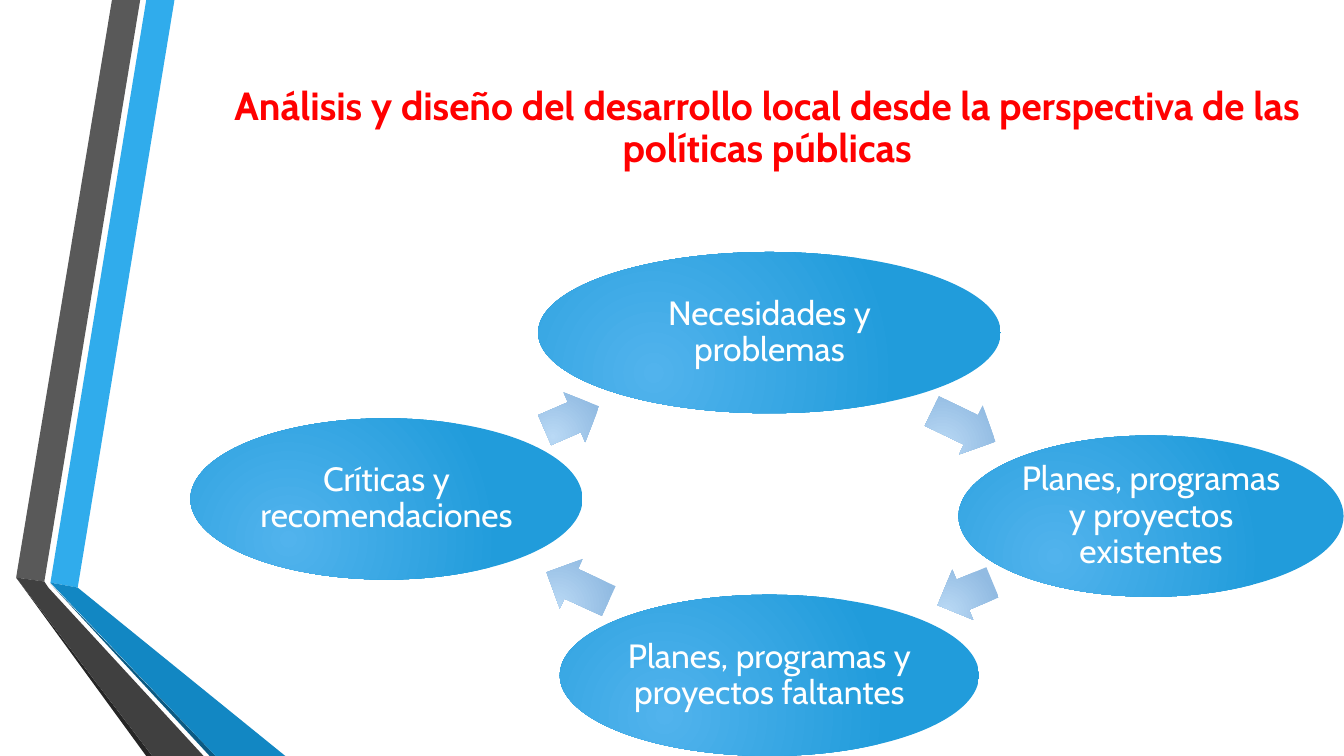
from dataclasses import dataclass

import pptx
import pptx.dml.color
import pptx.enum.shapes
import pptx.enum.text
import pptx.oxml
import pptx.oxml.ns
import pptx.util
from pptx.enum.shapes import MSO_SHAPE

SLIDE_WIDTH = pptx.util.Inches(13.33)
SLIDE_HEIGHT = pptx.util.Inches(7.5)
GRID = 100  # columns across and rows down the slide


@dataclass(frozen=True)
class Theme:
    font: str = "Cabin"
    title_size: int = 28
    stage_size: int = 24
    line_spacing: float = 0.9
    title: str = "FF0000"
    stage_text: str = "FFFFFF"
    stage_fill: tuple[str, str] = ("51B3ED", "219CDB")
    arrow_fill: tuple[str, str] = ("B9D9F5", "92BBE2")
    sky: str = "30ACEC"
    blue: str = "1287C3"
    navy: str = "0C5A82"
    grey: str = "595959"
    charcoal: str = "404040"
    black: str = "262626"


@dataclass(frozen=True)
class Ribbon:
    color: str
    points: tuple[tuple[float, float], ...]


@dataclass(frozen=True)
class Stage:
    text: str
    center_column: float
    center_row: float
    columns: float


@dataclass(frozen=True)
class Arrow:
    center_column: float
    center_row: float
    columns: float
    rotation: float


THEME = Theme()
TITLE = "Análisis y diseño del desarrollo local desde la perspectiva de las políticas públicas"
STAGE_ROWS = 21.33
ARROW_ROWS = 7.2

RIBBONS = (
    Ribbon(THEME.sky, ((3.75, 77.07), (5.78, 77.73), (12.98, 0), (10.88, 0))),
    Ribbon(THEME.grey, ((10.43, 0), (8.33, 0), (1.2, 76.4), (3.3, 76.93))),
    Ribbon(THEME.black, ((1.2, 76.4), (10.88, 100), (11.33, 100))),
    Ribbon(THEME.navy, ((3.75, 77.2), (15.6, 100), (16.05, 100))),
    Ribbon(THEME.blue, ((3.75, 77.07), (16.05, 100), (21.23, 100), (5.78, 77.73))),
    Ribbon(THEME.charcoal, ((15.15, 100), (3.6, 77.73), (3.3, 76.93), (1.2, 76.4), (11.33, 100))),
)
STAGES = (
    Stage("Necesidades y problemas", 57.25, 44, 34.43),
    Stage("Planes, programas y proyectos existentes", 85.65, 68.27, 28.65),
    Stage("Planes, programas y proyectos faltantes", 57.25, 89.33, 31.2),
    Stage("Críticas y recomendaciones", 28.76, 66, 29.18),
)
ARROWS = (
    Arrow(71.7, 56.4, 5.25, 25.7),
    Arrow(71.81, 78.53, 4.43, 157.4),
    Arrow(42.98, 77.6, 5.1, 204.8),
    Arrow(42.56, 55.33, 4.43, 336.5),
)


def across(columns: float) -> int:
    return round(SLIDE_WIDTH * columns / GRID)


def down(rows: float) -> int:
    return round(SLIDE_HEIGHT * rows / GRID)


def rgb(color: str) -> pptx.dml.color.RGBColor:
    return pptx.dml.color.RGBColor.from_string(color)


def write_text(shape, text: str, size: int, color: str, bold: bool = False) -> None:
    frame = shape.text_frame
    frame.text = text
    frame.word_wrap = True
    frame.auto_size = pptx.enum.text.MSO_AUTO_SIZE.NONE
    frame.vertical_anchor = pptx.enum.text.MSO_ANCHOR.MIDDLE
    para = frame.paragraphs[0]
    para.alignment = pptx.enum.text.PP_ALIGN.CENTER
    para.line_spacing = THEME.line_spacing
    font = para.runs[0].font
    font.name = THEME.font
    font.size = pptx.util.Pt(size)
    font.bold = bold
    font.color.rgb = rgb(color)


def fill_radial(shape, colors: tuple[str, str]) -> None:
    """Fill with a circular gradient centred on the middle of the bottom edge."""
    shape.fill.gradient()
    for stop, color, position in zip(shape.fill.gradient_stops, colors, (0, 1)):
        stop.color.rgb = rgb(color)
        stop.position = position
    linear = shape.element.spPr.find(".//" + pptx.oxml.ns.qn("a:lin"))
    circle = pptx.oxml.parse_xml(
        f'<a:path {pptx.oxml.ns.nsdecls("a")} path="circle">'
        '<a:fillToRect l="50000" t="100000" r="100000" b="50000"/></a:path>'
    )
    linear.getparent().replace(linear, circle)


def add_title(page) -> None:
    title = page.shapes.title
    title.left, title.top = across(16.2), down(7.33)
    title.width, title.height = across(81.75), down(19.33)
    write_text(title, TITLE, THEME.title_size, THEME.title, bold=True)


def add_ribbon(page, ribbon: Ribbon) -> None:
    start, *rest = [(across(column), down(row)) for column, row in ribbon.points]
    builder = page.shapes.build_freeform(*start)
    builder.add_line_segments(rest, close=True)
    shape = builder.convert_to_shape()
    shape.shadow.inherit = False
    shape.fill.solid()
    shape.fill.fore_color.rgb = rgb(ribbon.color)
    shape.line.fill.background()


def add_centered(page, kind: MSO_SHAPE, item: Stage | Arrow, rows: float, colors: tuple[str, str]):
    shape = page.shapes.add_shape(
        kind,
        across(item.center_column - item.columns / 2),
        down(item.center_row - rows / 2),
        across(item.columns),
        down(rows),
    )
    shape.shadow.inherit = False
    shape.line.fill.background()
    fill_radial(shape, colors)
    return shape


def add_stage(page, stage: Stage) -> None:
    oval = add_centered(page, MSO_SHAPE.OVAL, stage, STAGE_ROWS, THEME.stage_fill)
    frame = oval.text_frame
    frame.margin_left = frame.margin_right = pptx.util.Inches(0.03)
    frame.margin_top = frame.margin_bottom = pptx.util.Inches(0.03)
    write_text(oval, stage.text, THEME.stage_size, THEME.stage_text)


def add_arrow(page, arrow: Arrow) -> None:
    shape = add_centered(page, MSO_SHAPE.RIGHT_ARROW, arrow, ARROW_ROWS, THEME.arrow_fill)
    shape.adjustments[0] = 0.6
    shape.adjustments[1] = 0.5
    shape.rotation = arrow.rotation


def main() -> None:
    deck = pptx.Presentation()
    deck.slide_width, deck.slide_height = SLIDE_WIDTH, SLIDE_HEIGHT
    page = deck.slides.add_slide(deck.slide_layouts.get_by_name("Title Only"))
    for ribbon in RIBBONS:
        add_ribbon(page, ribbon)
    add_title(page)
    for stage, arrow in zip(STAGES, ARROWS):
        add_stage(page, stage)
        add_arrow(page, arrow)
    deck.save("out.pptx")


if __name__ == "__main__":
    main()
